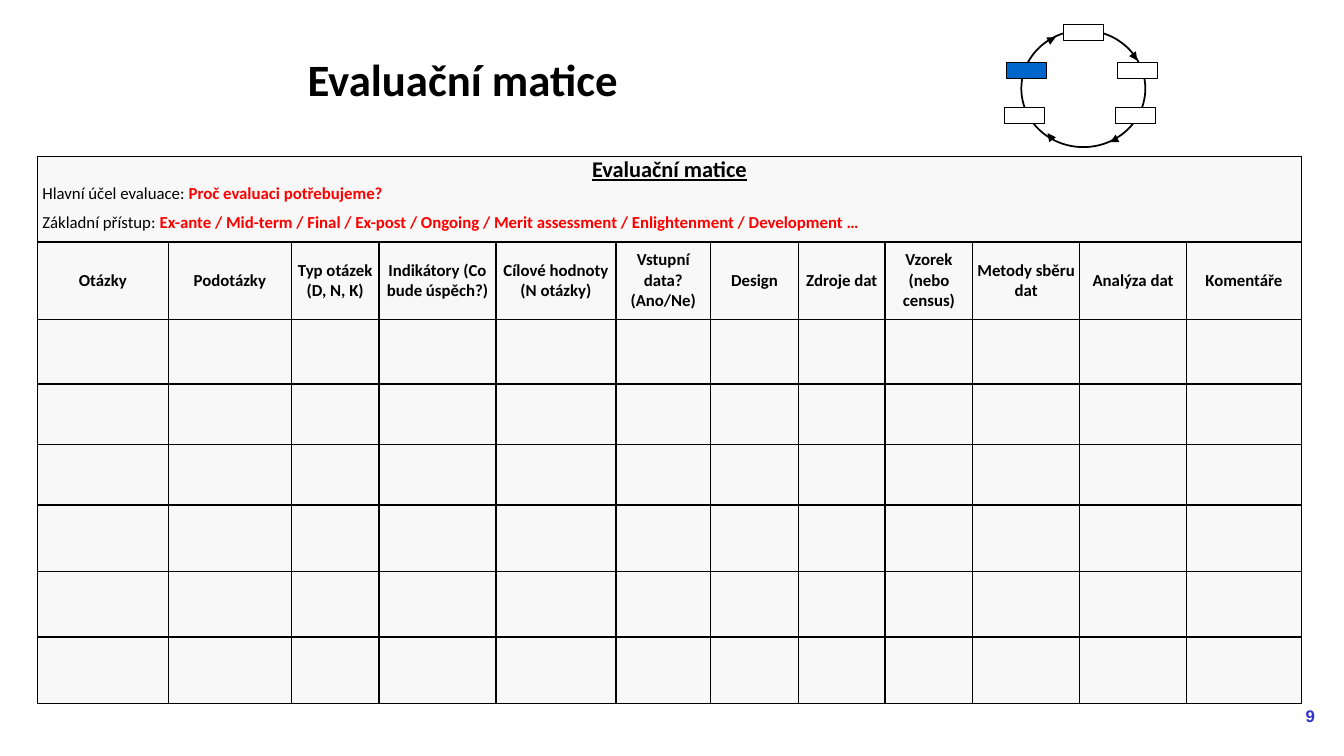
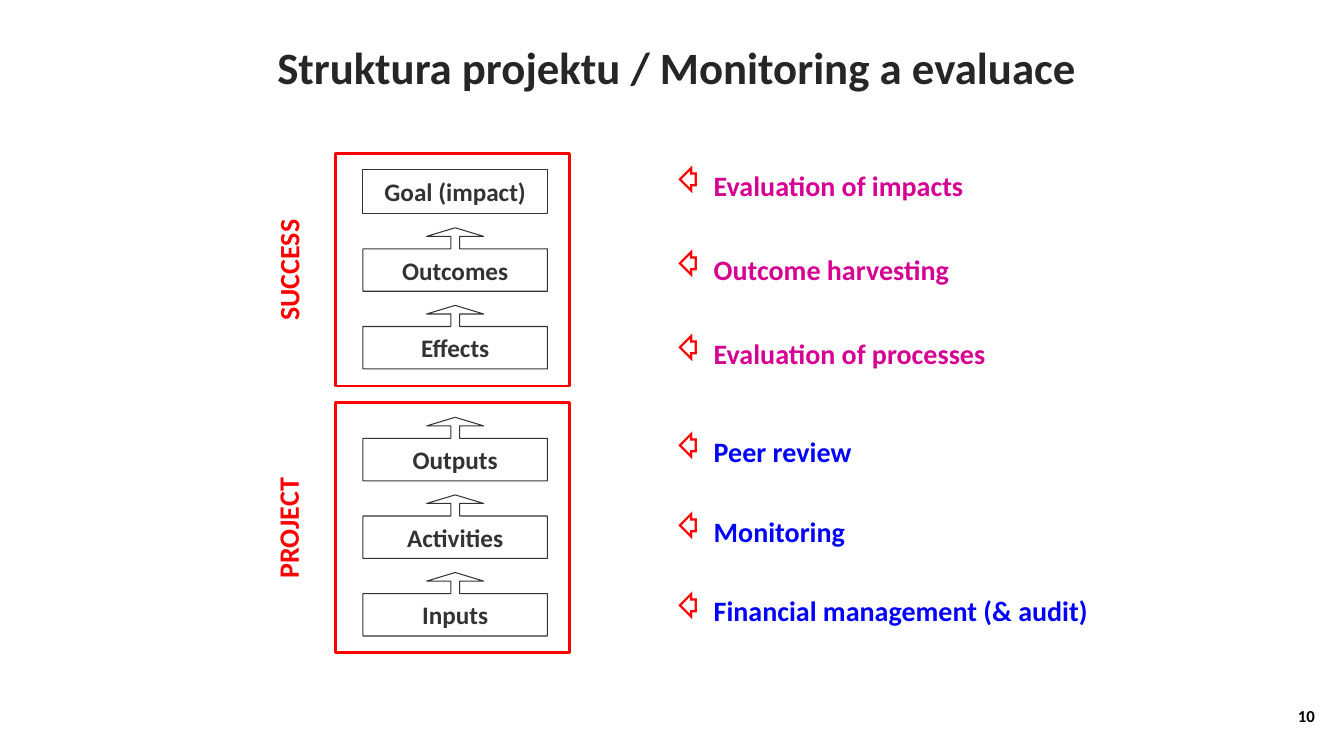
"""Build two slides on the evaluation matrix and on project structure with its evaluation methods."""
from dataclasses import dataclass
from typing import NamedTuple, Optional

from lxml.etree import SubElement
from pptx import Presentation
from pptx.dml.color import RGBColor
from pptx.enum.shapes import MSO_CONNECTOR, MSO_SHAPE
from pptx.enum.text import MSO_ANCHOR, MSO_AUTO_SIZE, PP_ALIGN
from pptx.oxml.ns import qn
from pptx.shapes.autoshape import Shape
from pptx.slide import Slide
from pptx.table import _Cell as Cell
from pptx.text.text import TextFrame
from pptx.util import Emu, Pt

EMU_PER_PX = 9144
BLACK = RGBColor(0x00, 0x00, 0x00)
WHITE = RGBColor(0xFF, 0xFF, 0xFF)
RED = RGBColor(0xFF, 0x00, 0x00)
BLUE = RGBColor(0x00, 0x00, 0xFF)
MAGENTA = RGBColor(0xD6, 0x00, 0x93)
CHARCOAL = RGBColor(0x26, 0x26, 0x26)
DARK_GRAY = RGBColor(0x33, 0x33, 0x33)
INDIGO = RGBColor(0x33, 0x33, 0xCC)
ACTIVE_BLUE = RGBColor(0x00, 0x66, 0xCC)
CELL_GRAY = RGBColor(0xF8, 0xF8, 0xF8)


class Box(NamedTuple):
    left: int
    top: int
    width: int
    height: int


class TextStyle(NamedTuple):
    size: int
    color: RGBColor = BLACK
    bold: bool = True
    font: str = "Calibri"
    underline: bool = False


class Method(NamedTuple):
    text: str
    color: RGBColor
    space_before: int


class Arrow(NamedTuple):
    start_x: int
    start_y: int
    end_x: int
    end_y: int


@dataclass(frozen=True)
class Phase:
    label: str
    frame: Box
    label_box: Box
    first_step_top: int
    steps: tuple[str, ...]


NUMBER_BOX = Box(1234, 690, 80, 40)

CYCLE_RING = Box(1013, 30, 123, 116)
CYCLE_STAGES = ((1055, 24), (1108, 62), (1106, 107), (996, 107), (998, 62))
ACTIVE_STAGE = 4
CYCLE_ARROWS = (
    Arrow(1042, 136, 1039, 132),
    Arrow(1041, 40, 1047, 37),
    Arrow(1107, 138, 1101, 141),
    Arrow(1123, 53, 1128, 60),
)

MATRIX_BOX = Box(37, 155, 1254, 543)
MATRIX_ROWS = (85, 77, 64, 60, 60, 66, 65, 66)
MATRIX_COLUMNS = (
    ("Otázky", 130),
    ("Podotázky", 122),
    ("Typ otázek (D, N, K)", 87),
    ("Indikátory (Co bude úspěch?)", 116),
    ("Cílové hodnoty (N otázky)", 119),
    ("Vstupní data? (Ano/Ne)", 94),
    ("Design", 87),
    ("Zdroje dat", 86),
    ("Vzorek (nebo census)", 87),
    ("Metody sběru dat", 106),
    ("Analýza dat", 106),
    ("Komentáře", 114),
)
MATRIX_INTRO = (
    ("Hlavní účel evaluace: ", "Proč evaluaci potřebujeme?"),
    (
        "Základní přístup: ",
        "Ex-ante / Mid-term / Final / Ex-post / Ongoing / Merit assessment"
        " / Enlightenment / Development …",
    ),
)

STEP_LEFT, STEP_WIDTH, STEP_HEIGHT, STEP_PITCH = 360, 183, 63, 77
CALLOUT_ADJUSTMENTS = (0.138, 0.449, 0.136, 0.667)
GOAL_BOX = Box(STEP_LEFT, 168, STEP_WIDTH, 44)
PHASES = (
    Phase("SUCCESS", Box(333, 152, 232, 231), Box(194, 246, 183, 44), 226,
          ("Outcomes", "Effects")),
    Phase("PROJECT", Box(333, 399, 232, 248), Box(185, 502, 200, 44), 414,
          ("Outputs", "Activities", "Inputs")),
)

METHODS_BOX = Box(656, 162, 452, 474)
METHOD_INDENT = 42
METHODS = (
    Method("Evaluation of impacts", MAGENTA, 0),
    Method("Outcome harvesting", MAGENTA, 36),
    Method("Evaluation of processes", MAGENTA, 36),
    Method("Peer review", BLUE, 46),
    Method("Monitoring", BLUE, 33),
    Method("Financial management (& audit)", BLUE, 33),
)


def px(length: int) -> Emu:
    return Emu(length * EMU_PER_PX)


def place(box: Box) -> tuple[Emu, ...]:
    return tuple(px(length) for length in box)


def style_font(font, style: TextStyle) -> None:
    font.name = style.font
    font.size = Pt(style.size)
    font.bold = style.bold
    font.underline = style.underline
    font.color.rgb = style.color


def write(text_frame: TextFrame, text: str, style: TextStyle,
          alignment: PP_ALIGN, anchor: MSO_ANCHOR) -> None:
    text_frame.text = text
    text_frame.word_wrap = True
    text_frame.vertical_anchor = anchor
    paragraph = text_frame.paragraphs[0]
    paragraph.alignment = alignment
    style_font(paragraph.runs[0].font, style)


def add_titled_slide(presentation, title: str, box: Box, color: RGBColor,
                     anchor: MSO_ANCHOR, number: str, number_style: TextStyle) -> Slide:
    slide = presentation.slides.add_slide(presentation.slide_layouts[5])
    placeholder = slide.shapes.title
    placeholder.left, placeholder.top, placeholder.width, placeholder.height = place(box)
    write(placeholder.text_frame, title, TextStyle(32, color), PP_ALIGN.LEFT, anchor)
    placeholder.text_frame.auto_size = MSO_AUTO_SIZE.NONE
    number_box = slide.shapes.add_textbox(*place(NUMBER_BOX))
    write(number_box.text_frame, number, number_style, PP_ALIGN.RIGHT, MSO_ANCHOR.MIDDLE)
    return slide


def add_outline(slide: Slide, kind: MSO_SHAPE, box: Box, line_color: RGBColor,
                line_width: float, fill: Optional[RGBColor] = None) -> Shape:
    shape = slide.shapes.add_shape(kind, *place(box))
    shape.shadow.inherit = False
    shape.line.color.rgb = line_color
    shape.line.width = Pt(line_width)
    if fill is None:
        shape.fill.background()
    else:
        shape.fill.solid()
        shape.fill.fore_color.rgb = fill
    return shape


def add_arrow(slide: Slide, arrow: Arrow) -> None:
    connector = slide.shapes.add_connector(
        MSO_CONNECTOR.STRAIGHT, *(px(length) for length in arrow))
    connector.line.color.rgb = BLACK
    connector.line.width = Pt(0.75)
    properties = connector.element.spPr
    SubElement(properties.find(qn("a:ln")), qn("a:tailEnd"), type="triangle")
    SubElement(properties, qn("a:effectLst"))


def add_cycle(slide: Slide) -> None:
    add_outline(slide, MSO_SHAPE.OVAL, CYCLE_RING, BLACK, 1.25)
    for index, (left, top) in enumerate(CYCLE_STAGES):
        fill = ACTIVE_BLUE if index == ACTIVE_STAGE else WHITE
        add_outline(slide, MSO_SHAPE.RECTANGLE, Box(left, top, 40, 16), BLACK, 0.75, fill)
    for arrow in CYCLE_ARROWS:
        add_arrow(slide, arrow)


def format_cell(cell: Cell) -> None:
    properties = cell._tc.get_or_add_tcPr()
    for side in ("a:lnL", "a:lnR", "a:lnT", "a:lnB"):
        border = SubElement(properties, qn(side), w=str(Pt(1)))
        fill = SubElement(border, qn("a:solidFill"))
        SubElement(fill, qn("a:srgbClr"), val=str(BLACK))
    cell.fill.solid()
    cell.fill.fore_color.rgb = CELL_GRAY


def set_margins(target, horizontal: int) -> None:
    target.margin_left = target.margin_right = px(horizontal)
    target.margin_top = target.margin_bottom = 0


def write_intro(cell: Cell) -> None:
    set_margins(cell, 5)
    text_frame = cell.text_frame
    write(text_frame, "Evaluační matice", TextStyle(16, underline=True),
          PP_ALIGN.CENTER, MSO_ANCHOR.TOP)
    for label, answer in MATRIX_INTRO:
        paragraph = text_frame.add_paragraph()
        for text, style in ((label, TextStyle(12, bold=False)), (answer, TextStyle(12, RED))):
            run = paragraph.add_run()
            run.text = text
            style_font(run.font, style)
    paragraph.space_before = paragraph.space_after = Pt(6)


def add_matrix(slide: Slide) -> None:
    table = slide.shapes.add_table(
        len(MATRIX_ROWS), len(MATRIX_COLUMNS), *place(MATRIX_BOX)).table
    table.first_row = table.horz_banding = False
    for row, height in zip(table.rows, MATRIX_ROWS):
        row.height = px(height)
    for cell in table.iter_cells():
        format_cell(cell)
    table.cell(0, 0).merge(table.cell(0, len(MATRIX_COLUMNS) - 1))
    write_intro(table.cell(0, 0))
    for index, (heading, width) in enumerate(MATRIX_COLUMNS):
        table.columns[index].width = px(width)
        cell = table.cell(1, index)
        set_margins(cell, 0)
        write(cell.text_frame, heading, TextStyle(12), PP_ALIGN.CENTER, MSO_ANCHOR.MIDDLE)
        cell.vertical_anchor = MSO_ANCHOR.MIDDLE


def add_step(slide: Slide, kind: MSO_SHAPE, box: Box, text: str, margin: int) -> Shape:
    step = add_outline(slide, kind, box, DARK_GRAY, 0.75)
    set_margins(step.text_frame, margin)
    write(step.text_frame, text, TextStyle(18, DARK_GRAY), PP_ALIGN.CENTER, MSO_ANCHOR.MIDDLE)
    return step


def add_phase(slide: Slide, phase: Phase) -> None:
    add_outline(slide, MSO_SHAPE.RECTANGLE, phase.frame, RED, 2)
    label = slide.shapes.add_textbox(*place(phase.label_box))
    label.rotation = 270
    write(label.text_frame, phase.label, TextStyle(20, RED), PP_ALIGN.CENTER, MSO_ANCHOR.BOTTOM)
    for index, text in enumerate(phase.steps):
        top = phase.first_step_top + index * STEP_PITCH
        step = add_step(slide, MSO_SHAPE.UP_ARROW_CALLOUT,
                        Box(STEP_LEFT, top, STEP_WIDTH, STEP_HEIGHT), text, 10)
        for position, value in enumerate(CALLOUT_ADJUSTMENTS):
            step.adjustments[position] = value


def add_methods(slide: Slide) -> None:
    text_frame = slide.shapes.add_textbox(*place(METHODS_BOX)).text_frame
    text_frame.word_wrap = True
    text_frame.text = "\n".join(method.text for method in METHODS)
    for paragraph, method in zip(text_frame.paragraphs, METHODS):
        paragraph.space_before = Pt(method.space_before)
        properties = paragraph._p.get_or_add_pPr()
        properties.set("marL", str(px(METHOD_INDENT)))
        properties.set("indent", str(px(-METHOD_INDENT)))
        bullet_color = SubElement(properties, qn("a:buClr"))
        SubElement(bullet_color, qn("a:srgbClr"), val=str(RED))
        SubElement(properties, qn("a:buChar"), char="⇦")
        style_font(paragraph.runs[0].font, TextStyle(20, method.color))


def main() -> None:
    presentation = Presentation()
    presentation.slide_width, presentation.slide_height = px(1333), px(750)

    matrix_slide = add_titled_slide(
        presentation, "Evaluační matice", Box(295, 32, 726, 92), BLACK,
        MSO_ANCHOR.MIDDLE, "9", TextStyle(12, INDIGO, font="Arial"))
    add_cycle(matrix_slide)
    add_matrix(matrix_slide)

    structure_slide = add_titled_slide(
        presentation, "Struktura projektu / Monitoring a evaluace", Box(265, 44, 854, 54),
        CHARCOAL, MSO_ANCHOR.BOTTOM, "10", TextStyle(12))
    add_methods(structure_slide)
    for phase in PHASES:
        add_phase(structure_slide, phase)
    add_step(structure_slide, MSO_SHAPE.RECTANGLE, GOAL_BOX, "Goal (impact)", 2)

    presentation.save("out.pptx")


if __name__ == "__main__":
    main()
